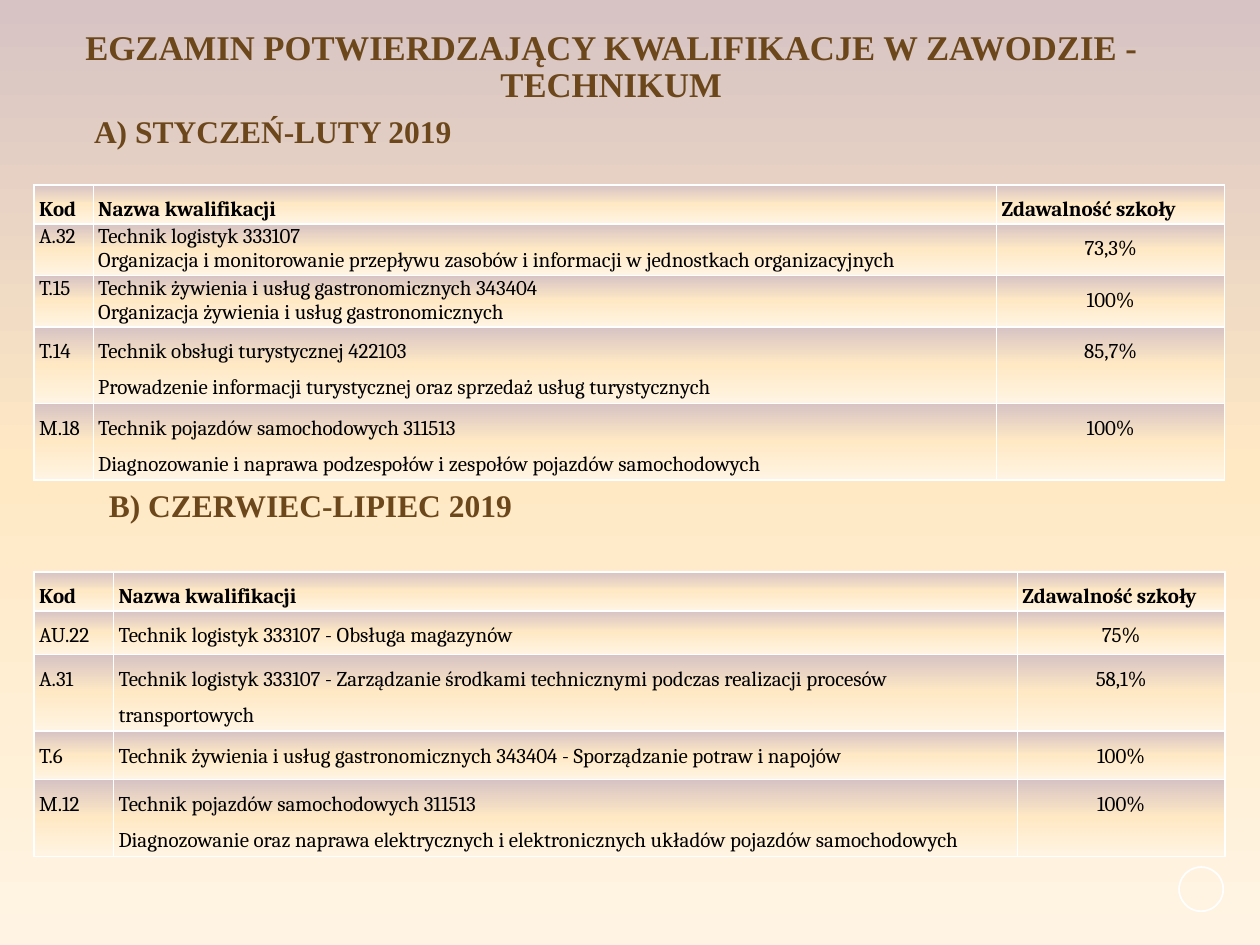
from lxml import etree
from pptx import Presentation
from pptx.dml.color import RGBColor
from pptx.enum.shapes import MSO_SHAPE
from pptx.enum.text import MSO_ANCHOR, PP_ALIGN
from pptx.oxml import parse_xml
from pptx.oxml.ns import nsdecls, qn
from pptx.util import Cm, Pt

CENTER, LEFT = PP_ALIGN.CENTER, PP_ALIGN.LEFT
MIDDLE = MSO_ANCHOR.MIDDLE
OVAL = MSO_SHAPE.OVAL

COLORS = {
    "heading": "6B471B",
    "text": "000000",
    "line": "FFFFFF",
    "top": "D7C3C3",
    "middle": "FFE9C5",
    "bottom": "FFF4E3",
}
HEADER = (0.73, 1.5, "Kod", "Nazwa kwalifikacji", "Zdawalność szkoły")
WINTER = [
    HEADER,
    (0.98, 1.0, "A.32", "Technik logistyk 333107\nOrganizacja i monitorowanie przepływu "
     "zasobów i informacji w jednostkach organizacyjnych", "73,3%"),
    (0.98, 1.0, "T.15", "Technik żywienia i usług gastronomicznych 343404\n"
     "Organizacja żywienia i usług gastronomicznych", "100%"),
    (1.46, 1.5, "T.14", "Technik obsługi turystycznej 422103\n"
     "Prowadzenie informacji turystycznej oraz sprzedaż usług turystycznych", "85,7%"),
    (1.46, 1.5, "M.18", "Technik pojazdów samochodowych 311513\n"
     "Diagnozowanie i naprawa podzespołów i zespołów pojazdów samochodowych", "100%"),
]
SUMMER = [
    HEADER,
    (0.88, 1.5, "AU.22", "Technik logistyk 333107 - Obsługa magazynów", "75%"),
    (1.46, 1.5, "A.31", "Technik logistyk 333107 - Zarządzanie środkami technicznymi "
     "podczas realizacji procesów transportowych", "58,1%"),
    (0.98, 1.5, "T.6", "Technik żywienia i usług gastronomicznych 343404 - "
     "Sporządzanie potraw i napojów", "100%"),
    (1.46, 1.5, "M.12", "Technik pojazdów samochodowych 311513\nDiagnozowanie oraz naprawa "
     "elektrycznych i elektronicznych układów pojazdów samochodowych", "100%"),
]


class ExamSlide:
    """Style and drawing methods for the exam results slide."""

    def __init__(self, prs):
        self.s = prs.slides.add_slide(prs.slide_layouts[6])
        self.heading_font = "Times New Roman"
        self.table_font = "Cambria"

    def gradient(self, fill, element):
        fill.gradient()
        fill.gradient_angle = 270
        stops = element.xpath(".//a:gsLst")[0]
        for stop in list(stops):
            stops.remove(stop)
        for pos, name in enumerate(("top", "middle", "bottom")):
            stop = etree.SubElement(stops, qn("a:gs"), pos=str(pos * 50000))
            etree.SubElement(stop, qn("a:srgbClr"), val=COLORS[name])

    def background(self):
        self.gradient(self.s.background.fill, self.s.element)

    def circle(self, left, top, size):
        sp = self.s.shapes.add_shape(OVAL, Cm(left), Cm(top), Cm(size), Cm(size))
        sp.shadow.inherit = False
        sp.fill.background()
        sp.line.color.rgb = RGBColor.from_string(COLORS["line"])
        sp.line.width = Pt(1)

    def font(self, p, name, size, color, bold):
        p.font.name = name
        p.font.size = Pt(size)
        p.font.bold = bold
        p.font.color.rgb = RGBColor.from_string(COLORS[color])

    def heading(self, text, left, top, width, size, spacing):
        sp = self.s.shapes.add_textbox(Cm(left), Cm(top), Cm(width), Cm(1.4))
        tf = sp.text_frame
        tf.word_wrap = True
        tf.vertical_anchor = MIDDLE
        tf.margin_bottom = Cm(0.88)
        p = tf.paragraphs[0]
        p.text = text
        p.alignment = CENTER
        p.line_spacing = spacing
        self.font(p, self.heading_font, size, "heading", True)

    def borders(self, cell):
        tc_pr = cell._tc.get_or_add_tcPr()
        for i, side in enumerate("LRTB"):
            tc_pr.insert(i, parse_xml(
                f'<a:ln{side} {nsdecls("a")} w="12700"><a:solidFill>'
                f'<a:srgbClr val="{COLORS["line"]}"/></a:solidFill></a:ln{side}>'))

    def cell(self, cell, text, spacing, align, bold):
        cell.margin_left = cell.margin_right = Cm(0.1)
        cell.margin_top, cell.margin_bottom = Cm(0.02), Cm(0)
        cell.text = text
        for p in cell.text_frame.paragraphs:
            p.alignment = align
            p.line_spacing = spacing
            self.font(p, self.table_font, 12, "text", bold)
        self.gradient(cell.fill, cell._tc)
        self.borders(cell)

    def table(self, rows, top, widths):
        height = sum(row[0] for row in rows)
        frame = self.s.shapes.add_table(len(rows), len(widths), Cm(0.69), Cm(top),
                                        Cm(sum(widths)), Cm(height))
        table = frame.table
        table.horz_banding = False
        for column, width in zip(table.columns, widths):
            column.width = Cm(width)
        for i, (row_height, spacing, *texts) in enumerate(rows):
            table.rows[i].height = Cm(row_height)
            for j, text in enumerate(texts):
                is_score = i > 0 and j == 2
                self.cell(table.cell(i, j), text, 1.5 if is_score else spacing,
                          CENTER if is_score else LEFT, i == 0)


def main():
    prs = Presentation()
    prs.slide_width, prs.slide_height = Cm(25.4), Cm(19.05)
    slide = ExamSlide(prs)
    slide.background()
    slide.circle(23.77, 17.48, 0.89)
    slide.heading("EGZAMIN POTWIERDZAJĄCY KWALIFIKACJE W ZAWODZIE - TECHNIKUM",
                  0.89, 1.04, 22.86, 19.8, 0.9)
    slide.table(SUMMER, 11.53, (1.6, 18.22, 4.18))
    slide.heading("B) CZERWIEC-LIPIEC 2019", 1.27, 9.96, 9.98, 18, 0.7)
    slide.heading("A) STYCZEŃ-LUTY 2019", 0.51, 2.41, 9.98, 18, 0.7)
    slide.table(WINTER, 3.73, (1.19, 18.21, 4.6))
    prs.save("out.pptx")


if __name__ == "__main__":
    main()
